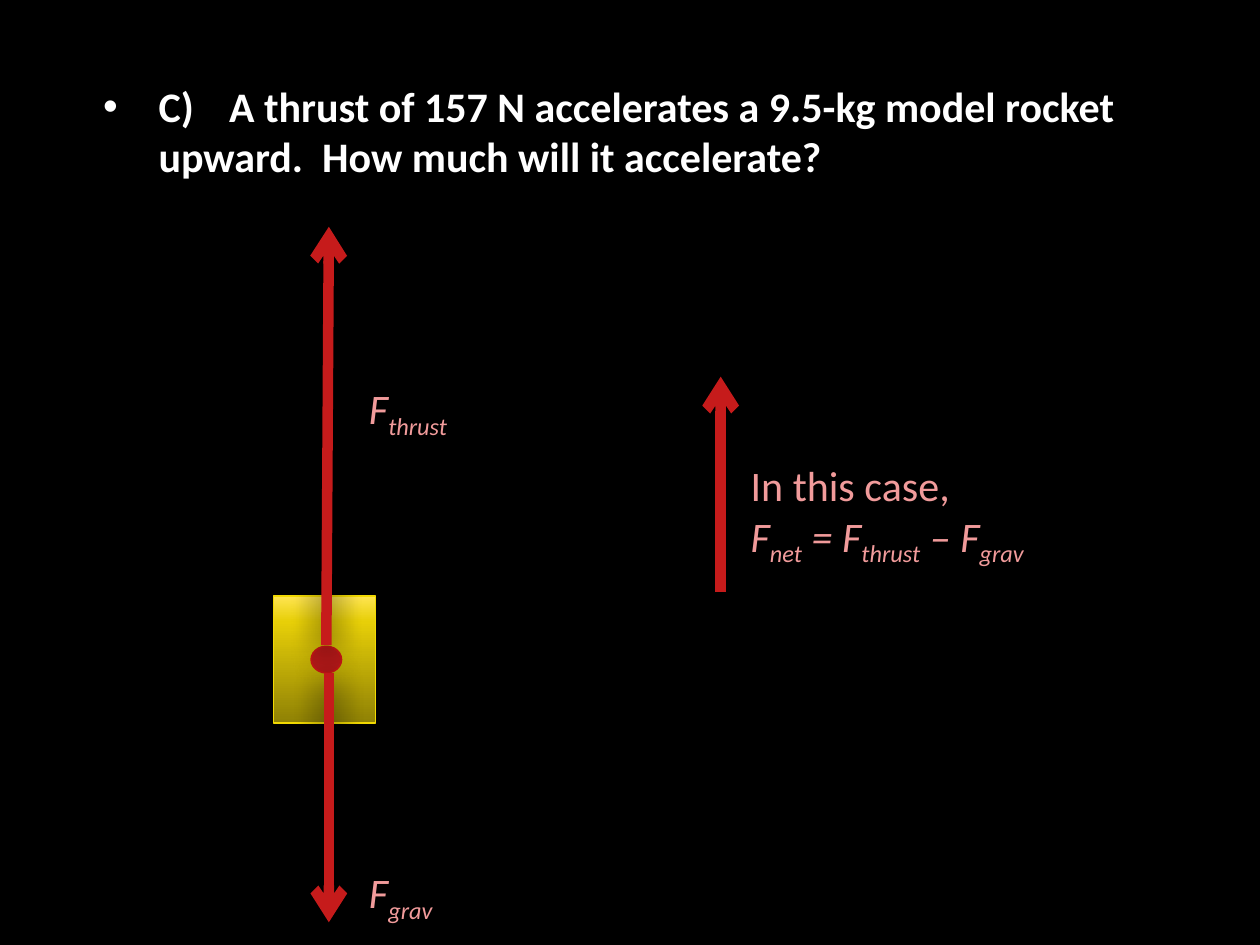
from copy import deepcopy
from dataclasses import dataclass

from lxml import etree
from pptx import Presentation
from pptx import util as u
from pptx.dml.color import RGBColor
from pptx.enum import shapes, text
from pptx.oxml.ns import qn


@dataclass(frozen=True)
class Theme:
    font: str = "Calibri"
    size: int = 24
    background: str = "000000"
    question: str = "FFFFFF"
    label: str = "F19B9B"
    arrow: str = "C61B1B"
    arrow_width: int = 6
    dot_fill: str = "B41919"
    dot_line: str = "C61616"
    rocket_line: str = "F2D902"
    rocket_stops: tuple = ((0, "8F8105"), (0.8, "E7CF08"), (1, "FFE552"))


@dataclass(frozen=True)
class Arrow:
    start: tuple[float, float]
    end: tuple[float, float]


@dataclass(frozen=True)
class Label:
    """Lines of text; each line alternates normal and subscript pieces."""
    at: tuple[float, float, float, float]
    lines: tuple[tuple[str, ...], ...]
    upright_lines: int = 0


THEME = Theme()
QUESTION = ("C)\tA thrust of 157 N accelerates a 9.5-kg model rocket upward.  "
            "How much will it accelerate?")
FORCES = (Arrow((2.61, 5.34), (2.61, 7.32)), Arrow((2.59, 5.12), (2.61, 1.8)))
NET_FORCE = Arrow((5.72, 4.7), (5.72, 2.99))
LABELS = (
    Label((2.83, 2.99, 1.11, 0.5), (("F", "thrust"),)),
    Label((2.83, 6.83, 1.11, 0.5), (("F", "grav"),)),
    Label((5.86, 3.6, 3.44, 1.31),
          (("In this case,",), ("F", "net", " = F", "thrust", " – F", "grav")),
          upright_lines=1),
)


def rgb(value: str) -> RGBColor:
    return RGBColor.from_string(value)


def inches(values: tuple[float, ...]) -> list[u.Length]:
    return [u.Inches(value) for value in values]


def style_font(font, color: str, bold: bool = False, italic: bool = False) -> None:
    font.name, font.size = THEME.font, u.Pt(THEME.size)
    font.bold, font.italic = bold, italic
    font.color.rgb = rgb(color)


def add_question(page) -> None:
    box = page.shapes.add_textbox(*inches((0.72, 0.59, 8.29, 4.32)))
    box.text_frame.word_wrap = True
    box.text_frame.text = QUESTION
    para = box.text_frame.paragraphs[0]
    properties = para._p.get_or_add_pPr()
    properties.set("marL", str(u.Inches(0.44)))
    properties.set("indent", str(-u.Inches(0.44)))
    etree.SubElement(properties, qn("a:buFont"), typeface="Arial")
    etree.SubElement(properties, qn("a:buChar"), char="•")
    style_font(para.runs[0].font, THEME.question, bold=True)


def add_shape(page, kind, at: tuple[float, ...], line_color: str):
    shape = page.shapes.add_shape(kind, *inches(at))
    shape.shadow.inherit = False
    shape.line.color.rgb = rgb(line_color)
    shape.line.width = u.Pt(1)
    return shape


def add_rocket(page) -> None:
    """Draw the rocket body, shaded from bottom to top, and its centre dot."""
    body = add_shape(page, shapes.MSO_SHAPE.RECTANGLE, (2.17, 4.73, 0.81, 1.01),
                     THEME.rocket_line)
    body.fill.gradient()
    body.fill.gradient_angle = 90
    stop_list = body._element.spPr.find(f".//{qn('a:gsLst')}")
    stop_list.append(deepcopy(stop_list[-1]))
    for stop, (position, color) in zip(body.fill.gradient_stops, THEME.rocket_stops):
        stop.position = position
        stop.color.rgb = rgb(color)
    dot = add_shape(page, shapes.MSO_SHAPE.OVAL, (2.47, 5.13, 0.24, 0.21),
                    THEME.dot_line)
    dot.fill.solid()
    dot.fill.fore_color.rgb = rgb(THEME.dot_fill)


def add_arrow(page, arrow: Arrow) -> None:
    """Draw a thick arrow with a soft shadow below it."""
    line = page.shapes.add_connector(shapes.MSO_CONNECTOR.STRAIGHT,
                                     *inches(arrow.start + arrow.end))
    line.line.color.rgb = rgb(THEME.arrow)
    line.line.width = u.Pt(THEME.arrow_width)
    etree.SubElement(line.line._get_or_add_ln(), qn("a:tailEnd"), type="arrow")
    effects = etree.SubElement(line._element.spPr, qn("a:effectLst"))
    shadow = etree.SubElement(effects, qn("a:outerShdw"), blurRad=str(u.Pt(18)),
                              dist=str(u.Pt(3)), dir="5400000", rotWithShape="0")
    color = etree.SubElement(shadow, qn("a:srgbClr"), val=THEME.background)
    etree.SubElement(color, qn("a:alpha"), val="80000")


def add_label(page, label: Label) -> None:
    box = page.shapes.add_textbox(*inches(label.at))
    frame = box.text_frame
    frame.word_wrap = True
    frame.auto_size = text.MSO_AUTO_SIZE.SHAPE_TO_FIT_TEXT
    for number, pieces in enumerate(label.lines):
        para = frame.add_paragraph() if number else frame.paragraphs[0]
        for position, piece in enumerate(pieces):
            span = para.add_run()
            span.text = piece
            style_font(span.font, THEME.label, italic=number >= label.upright_lines)
            if position % 2:
                span._r.get_or_add_rPr().set("baseline", "-25000")


def main() -> None:
    deck = Presentation()
    deck.slide_width, deck.slide_height = inches((10, 7.5))
    page = deck.slides.add_slide(deck.slide_layouts[6])
    page.background.fill.solid()
    page.background.fill.fore_color.rgb = rgb(THEME.background)
    add_question(page)
    add_rocket(page)
    for force in FORCES:
        add_arrow(page, force)
    for label in LABELS:
        add_label(page, label)
    add_arrow(page, NET_FORCE)
    deck.save("out.pptx")


if __name__ == "__main__":
    main()
